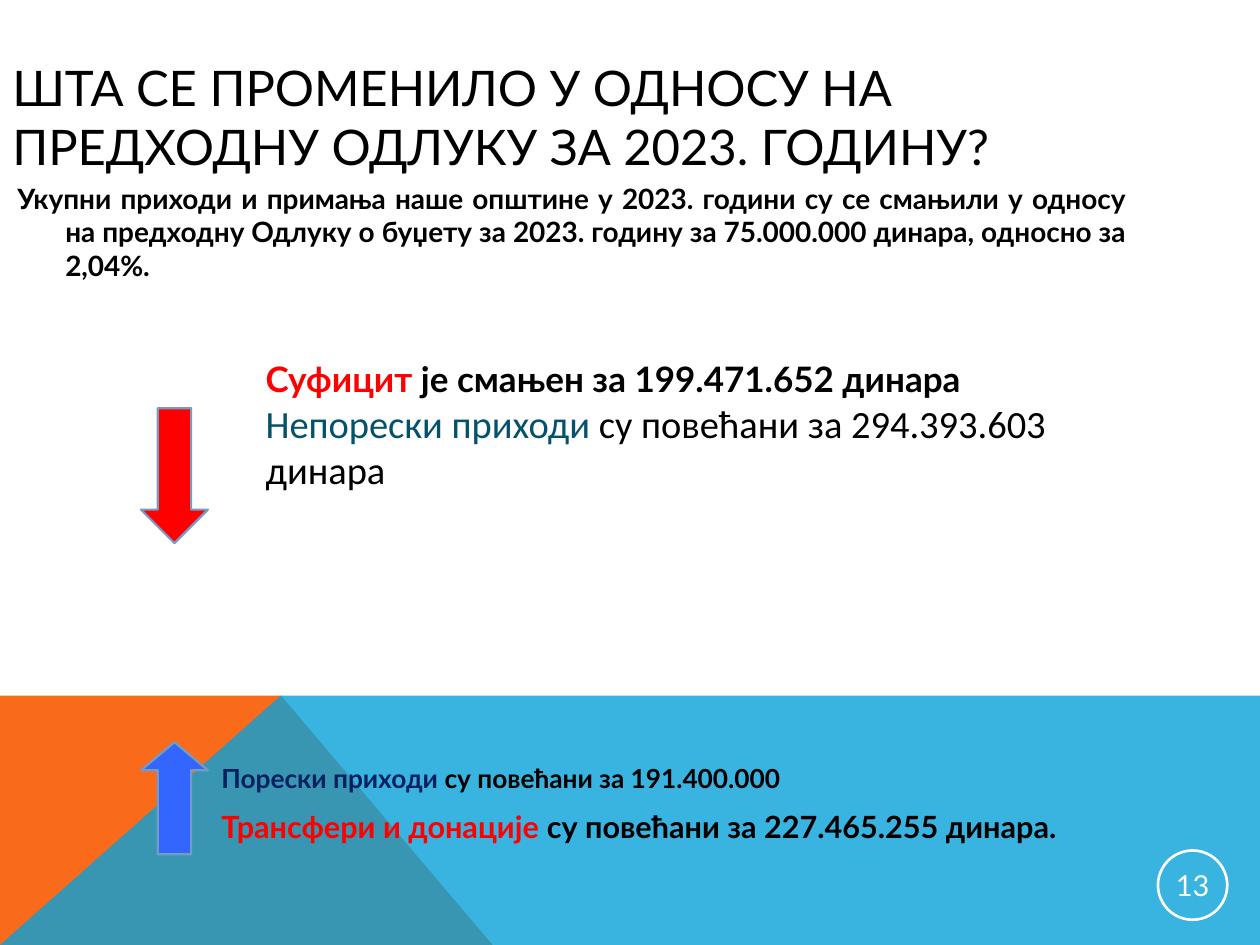
from lxml.etree import SubElement
from pptx import Presentation
from pptx.dml.color import RGBColor
from pptx.enum.shapes import MSO_SHAPE as Shape
from pptx.enum.text import MSO_ANCHOR as Anchor, PP_ALIGN as Align
from pptx.oxml.ns import qn
from pptx.util import Inches, Pt

BLACK = RGBColor(0, 0, 0)
WHITE = RGBColor(255, 255, 255)
RED = RGBColor(255, 0, 0)
BLUE = RGBColor(0x33, 0x66, 0xFF)
NAVY = RGBColor(0x00, 0x20, 0x60)
TEAL = RGBColor(0x04, 0x51, 0x6C)
EDGE = RGBColor(0x73, 0x9C, 0xC3)
ORANGE = RGBColor(0xF9, 0x6A, 0x1B)
SKY = RGBColor(0x08, 0xA1, 0xD9)


def add_run(para, text, size, color=BLACK, bold=False, font="Lato"):
    """Add one styled run to a paragraph."""
    run = para.add_run()
    run.text = text
    run.font.size = Pt(size)
    run.font.name = font
    run.font.bold = bold
    run.font.color.rgb = color


def add_frame(slide, box):
    """Add a wrapping text box and return its frame."""
    frame = slide.shapes.add_textbox(*map(Inches, box)).text_frame
    frame.word_wrap = True
    return frame


def add_wedge(slide, box, points, color, alpha=None):
    """Draw a filled outline whose points are relative to the box."""
    left, top, wide, high = box
    spots = [(Inches(left + x * wide), Inches(top + y * high)) for x, y in points]
    pen = slide.shapes.build_freeform(*spots[0])
    pen.add_line_segments(spots[1:], close=True)
    wedge = pen.convert_to_shape()
    wedge.shadow.inherit = False
    wedge.fill.solid()
    wedge.fill.fore_color.rgb = color
    wedge.line.fill.background()
    if alpha:
        tone = wedge.element.spPr.find(qn("a:solidFill"))[0]
        SubElement(tone, qn("a:alpha"), val=str(alpha * 1000))


def add_band(slide, box):
    """Draw the two overlapping wedges at the foot of the slide."""
    left, top, wide, high = box
    peak = 2.23
    base = 3.91
    add_wedge(slide, (left, top, base, high),
              [(0, 1), (0, 0), (peak / base, 0), (1, 1)], ORANGE)
    add_wedge(slide, box, [(0, 1), (peak / wide, 0), (1, 0), (1, 1)], SKY, 80)


def add_badge(slide, box, number):
    """Draw the page number in a ring."""
    ring = slide.shapes.add_shape(Shape.OVAL, *map(Inches, box))
    ring.shadow.inherit = False
    ring.fill.background()
    ring.line.color.rgb = WHITE
    ring.line.width = Pt(1.5)
    frame = ring.text_frame
    frame.vertical_anchor = Anchor.MIDDLE
    frame.margin_left = frame.margin_right = Inches(0.01)
    frame.margin_top = frame.margin_bottom = Inches(0.01)
    para = frame.paragraphs[0]
    para.alignment = Align.CENTER
    add_run(para, number, 16.5, WHITE)


def add_title(slide, box):
    """Write the heading."""
    frame = add_frame(slide, box)
    frame.vertical_anchor = Anchor.MIDDLE
    add_run(frame.paragraphs[0],
            "ШТА СЕ ПРОМЕНИЛО У ОДНОСУ НА ПРЕДХОДНУ ОДЛУКУ ЗА 2023. ГОДИНУ?", 28)


def add_intro(slide, box):
    """Write the justified summary with a hanging indent."""
    para = add_frame(slide, box).paragraphs[0]
    para.alignment = Align.JUSTIFY
    props = para._p.get_or_add_pPr()
    props.set("marL", str(Inches(0.38)))
    props.set("indent", str(-Inches(0.38)))
    add_run(para, "Укупни приходи и примања наше општине у 2023. години су се "
            "смањили у односу на предходну Одлуку о буџету за 2023. годину "
            "за 75.000.000 динара, односно за 2,04%.", 16, bold=True)


def add_notes(slide, box, notes, gap=0):
    """Write paragraphs that each open with a coloured term."""
    frame = add_frame(slide, box)
    for i, (term, rest, color, size, bold, font) in enumerate(notes):
        para = frame.add_paragraph() if i else frame.paragraphs[0]
        para.space_before = Pt(gap if i else 0)
        add_run(para, term, size, color, bold, font)
        add_run(para, rest, size, BLACK, bold, font)


def add_arrow(slide, box, kind, color, head):
    """Draw a block arrow."""
    arrow = slide.shapes.add_shape(kind, *map(Inches, box))
    arrow.shadow.inherit = False
    arrow.adjustments[0] = 0.5
    arrow.adjustments[1] = head
    arrow.fill.solid()
    arrow.fill.fore_color.rgb = color
    arrow.line.color.rgb = EDGE
    arrow.line.width = Pt(1.25)


def main():
    """Build the slide and save it."""
    deck = Presentation()
    deck.slide_width = Inches(10)
    deck.slide_height = Inches(7.5)
    slide = deck.slides.add_slide(deck.slide_layouts[6])
    add_band(slide, (0, 5.52, 10, 1.98))
    add_badge(slide, (9.19, 6.75, 0.55, 0.55), "13")
    add_title(slide, (0, 0.3, 8.73, 1.25))
    add_intro(slide, (0.04, 1.39, 9, 1.24))
    add_notes(slide, (1.66, 6, 8.34, 0.78), [
        ("Порески приходи ", "су повећани за 191.400.000",
         NAVY, 15, True, "Lato"),
        ("Трансфери и донације ", "су повећани за 227.465.255 динара.",
         RED, 17.5, True, "Lato"),
    ], 8)
    add_notes(slide, (2.01, 2.79, 6.69, 1.18), [
        ("Суфицит", " је смањен за 199.471.652 динара",
         RED, 20, True, "Lato"),
        ("Непорески приходи ", "су повећани за 294.393.603 динара",
         TEAL, 22, False, "Calibri"),
    ])
    add_arrow(slide, (1.12, 3.24, 0.53, 1.07), Shape.DOWN_ARROW, RED, 0.5)
    add_arrow(slide, (1.12, 5.89, 0.53, 0.89), Shape.UP_ARROW, BLUE, 0.42)
    deck.save("out.pptx")


if __name__ == "__main__":
    main()
